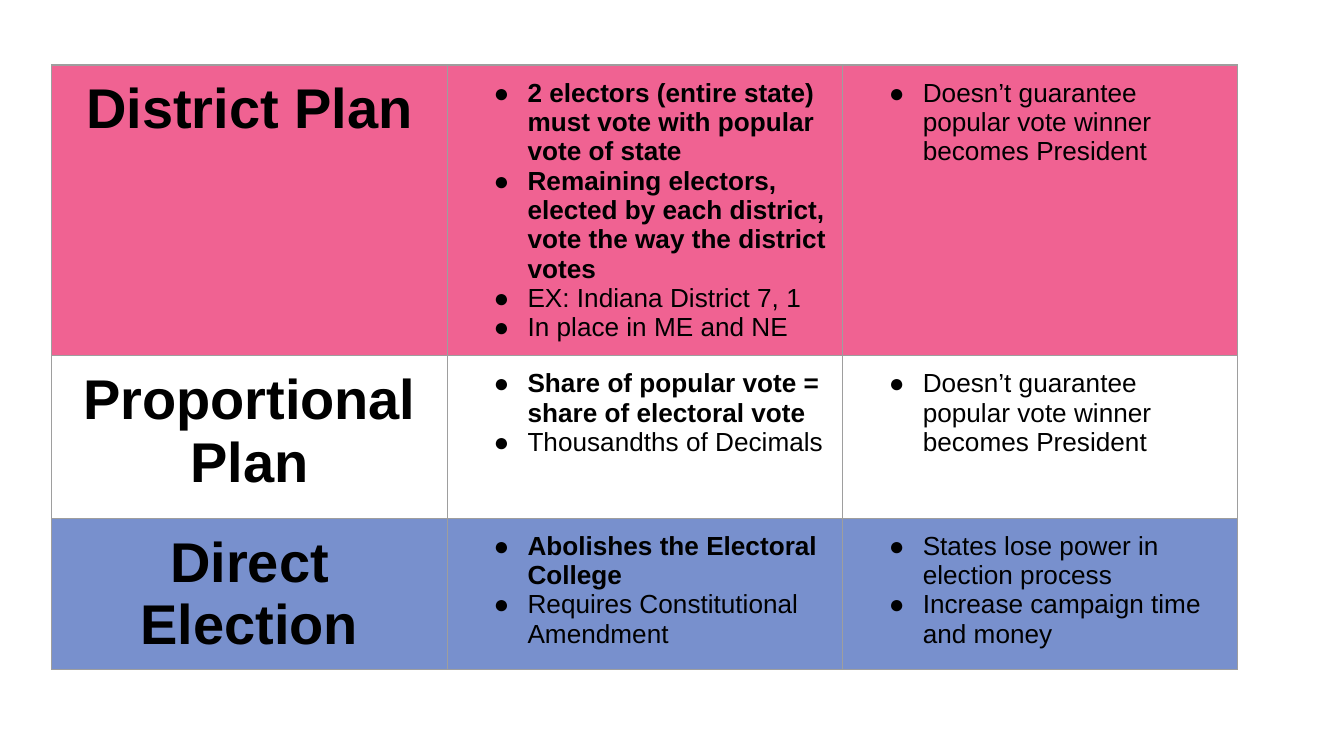
"""Build a slide with a table that compares plans for electing the President."""
from dataclasses import dataclass
from typing import Optional

from lxml.etree import SubElement
from pptx import Presentation
from pptx.dml.color import RGBColor
from pptx.enum.text import PP_ALIGN
from pptx.oxml.ns import qn
from pptx.table import _Cell
from pptx.util import Cm, Pt


@dataclass(frozen=True)
class Theme:
    font: str = "Arial"
    text: str = "000000"
    border: str = "9E9E9E"
    pink: str = "F06292"
    blue: str = "7890CD"
    title_size: int = 30
    body_size: int = 14
    border_width: float = 0.75


@dataclass(frozen=True)
class Point:
    text: str
    bold: bool = False


@dataclass(frozen=True)
class Plan:
    name: str
    features: list[Point]
    drawbacks: list[Point]
    height: float
    fill: Optional[str] = None


THEME = Theme()
COLUMN_WIDTH = 7.47
MARGIN = Cm(0.25)
NO_WINNER = Point("Doesn’t guarantee popular vote winner becomes President")
PLANS = [
    Plan(
        "District Plan",
        [
            Point("2 electors (entire state) must vote with popular vote of state", True),
            Point("Remaining electors, elected by each district, vote the way the district votes", True),
            Point("EX: Indiana District 7, 1"),
            Point("In place in ME and NE"),
        ],
        [NO_WINNER],
        4.78,
        THEME.pink,
    ),
    Plan(
        "Proportional Plan",
        [
            Point("Share of popular vote = share of electoral vote", True),
            Point("Thousandths of Decimals"),
        ],
        [NO_WINNER],
        3.07,
    ),
    Plan(
        "Direct Election",
        [
            Point("Abolishes the Electoral College", True),
            Point("Requires Constitutional Amendment"),
        ],
        [
            Point("States lose power in election process"),
            Point("Increase campaign time and money"),
        ],
        2.51,
        THEME.blue,
    ),
]


def write_paragraph(paragraph, text: str, *, size: int, bold: bool = False,
                    align: PP_ALIGN = PP_ALIGN.LEFT, bullet: bool = False) -> None:
    paragraph.alignment = align
    if bullet:
        properties = paragraph._p.get_or_add_pPr()
        properties.set("marL", str(Cm(1.27)))
        properties.set("indent", str(-Cm(0.64)))
        SubElement(properties, qn("a:buFont"), typeface=THEME.font)
        SubElement(properties, qn("a:buChar"), char="●")
    run = paragraph.add_run()
    run.text = text
    run.font.name = THEME.font
    run.font.size = Pt(size)
    run.font.bold = bold
    run.font.color.rgb = RGBColor.from_string(THEME.text)


def style_cell(cell: _Cell, fill: Optional[str]) -> None:
    cell.margin_left = cell.margin_right = MARGIN
    cell.margin_top = cell.margin_bottom = MARGIN
    properties = cell._tc.get_or_add_tcPr()
    for side in ("lnL", "lnR", "lnT", "lnB"):
        line = SubElement(properties, qn(f"a:{side}"), w=str(Pt(THEME.border_width)))
        solid = SubElement(line, qn("a:solidFill"))
        SubElement(solid, qn("a:srgbClr"), val=THEME.border)
    if fill:
        cell.fill.solid()
        cell.fill.fore_color.rgb = RGBColor.from_string(fill)
    else:
        cell.fill.background()


def write_points(cell: _Cell, points: list[Point]) -> None:
    frame = cell.text_frame
    for index, point in enumerate(points):
        paragraph = frame.add_paragraph() if index else frame.paragraphs[0]
        write_paragraph(paragraph, point.text, size=THEME.body_size,
                        bold=point.bold, bullet=True)


def add_plan_table(slide, plans: list[Plan]) -> None:
    height = sum(plan.height for plan in plans)
    table = slide.shapes.add_table(
        len(plans), 3, Cm(0.98), Cm(1.23), Cm(3 * COLUMN_WIDTH), Cm(height)
    ).table
    table.first_row = False
    table.horz_banding = False
    for column in table.columns:
        column.width = Cm(COLUMN_WIDTH)
    for row, plan in zip(table.rows, plans):
        row.height = Cm(plan.height)
        name, features, drawbacks = row.cells
        for cell in (name, features, drawbacks):
            style_cell(cell, plan.fill)
        write_paragraph(name.text_frame.paragraphs[0], plan.name,
                        size=THEME.title_size, bold=True, align=PP_ALIGN.CENTER)
        write_points(features, plan.features)
        write_points(drawbacks, plan.drawbacks)


def main() -> None:
    presentation = Presentation()
    presentation.slide_width = Cm(25.4)
    presentation.slide_height = Cm(14.29)
    slide = presentation.slides.add_slide(presentation.slide_layouts[6])
    add_plan_table(slide, PLANS)
    presentation.save("out.pptx")


if __name__ == "__main__":
    main()
